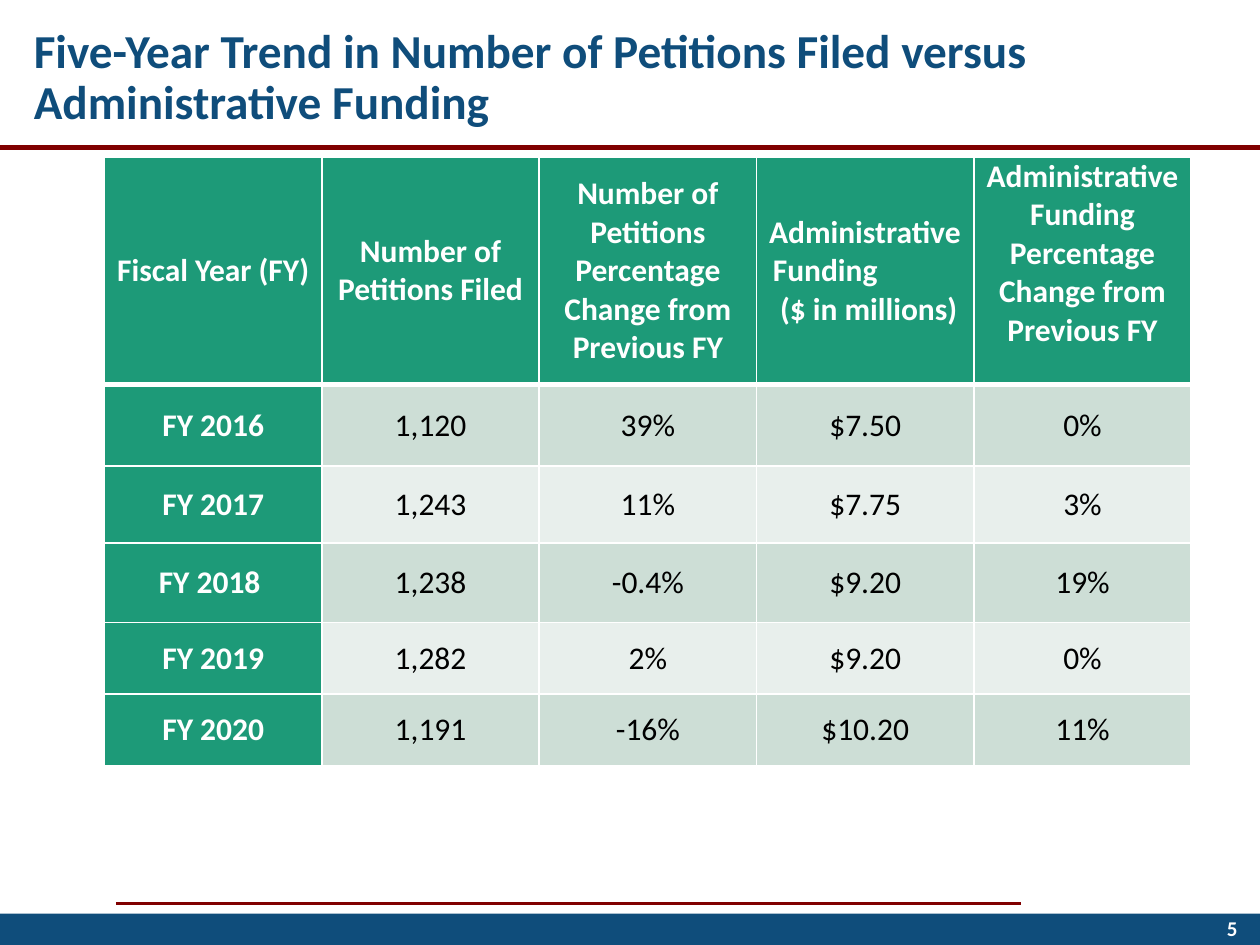
import dataclasses

import lxml.etree
import pptx
import pptx.dml.color
import pptx.enum.shapes
import pptx.enum.text
import pptx.oxml.ns
import pptx.util

Inches = pptx.util.Inches
Pt = pptx.util.Pt
ALIGN = pptx.enum.text.PP_ALIGN
ANCHOR = pptx.enum.text.MSO_ANCHOR
qn = pptx.oxml.ns.qn


@dataclasses.dataclass(frozen=True)
class Theme:
    font: str = "Calibri"
    navy: str = "0F4D7B"
    maroon: str = "800000"
    green: str = "1D9A78"
    bands: tuple = ("CDDED6", "E8EFEC")
    white: str = "FFFFFF"
    black: str = "000000"
    title_size: int = 27
    table_size: int = 18
    number_size: int = 12


THEME = Theme()

HEADERS = [
    "Fiscal Year (FY)",
    "Number of Petitions Filed",
    "Number of Petitions Percentage Change from Previous FY",
    "Administrative Funding\n ($ in millions)",
    "Administrative Funding Percentage Change from Previous FY",
]
YEARS = [
    ("FY 2016", "1,120", "39%", "$7.50", "0%"),
    ("FY 2017", "1,243", "11%", "$7.75", "3%"),
    ("FY 2018 ", "1,238", "-0.4%", "$9.20", "19%"),
    ("FY 2019", "1,282", "2%", "$9.20", "0%"),
    ("FY 2020", "1,191", "-16%", "$10.20", "11%"),
]
ROW_HEIGHTS = [1.8, 0.65, 0.61, 0.63, 0.57, 0.57]
COLUMN_WIDTH = 1.725


def rgb(value):
    return pptx.dml.color.RGBColor.from_string(value)


def style(paragraph, size, color, bold, align):
    paragraph.alignment = align
    paragraph.font.name = THEME.font
    paragraph.font.size = Pt(size)
    paragraph.font.bold = bold
    paragraph.font.color.rgb = rgb(color)


def add_text(slide, text, box, size, color, align=ALIGN.LEFT):
    frame = slide.shapes.add_textbox(*map(Inches, box)).text_frame
    frame.word_wrap = True
    frame.vertical_anchor = ANCHOR.MIDDLE
    frame.text = text
    style(frame.paragraphs[0], size, color, True, align)
    return frame


def add_rule(slide, left, right, y, weight):
    rule = slide.shapes.add_connector(
        pptx.enum.shapes.MSO_CONNECTOR.STRAIGHT,
        Inches(left), Inches(y), Inches(right), Inches(y))
    rule.line.color.rgb = rgb(THEME.maroon)
    rule.line.width = Pt(weight)
    lxml.etree.SubElement(rule._element.spPr, qn("a:effectLst"))


def add_footer_bar(slide):
    bar = slide.shapes.add_shape(
        pptx.enum.shapes.MSO_SHAPE.RECTANGLE,
        Inches(0), Inches(7.25), Inches(10), Inches(0.25))
    bar.shadow.inherit = False
    bar.fill.solid()
    bar.fill.fore_color.rgb = rgb(THEME.navy)
    bar.line.fill.background()


def set_borders(cell, bottom):
    properties = cell._tc.get_or_add_tcPr()
    for position, (side, weight) in enumerate(
            (("L", 1), ("R", 1), ("T", 1), ("B", bottom))):
        border = lxml.etree.Element(qn(f"a:ln{side}"), w=str(Pt(weight)))
        fill = lxml.etree.SubElement(border, qn("a:solidFill"))
        lxml.etree.SubElement(fill, qn("a:srgbClr"), val=THEME.white)
        properties.insert(position, border)


def fill_cell(cell, text, fill, color, bold, bottom=1):
    cell.fill.solid()
    cell.fill.fore_color.rgb = rgb(fill)
    cell.margin_left = cell.margin_right = Inches(0.07)
    cell.margin_top = cell.margin_bottom = 0
    cell.vertical_anchor = ANCHOR.MIDDLE
    cell.text = text
    for paragraph in cell.text_frame.paragraphs:
        style(paragraph, THEME.table_size, color, bold, ALIGN.CENTER)
    set_borders(cell, bottom)


def add_funding_table(slide):
    table = slide.shapes.add_table(
        len(ROW_HEIGHTS), len(HEADERS), Inches(0.83), Inches(1.25),
        Inches(COLUMN_WIDTH * len(HEADERS)), Inches(sum(ROW_HEIGHTS))).table
    for column in table.columns:
        column.width = Inches(COLUMN_WIDTH)
    for row, height in zip(table.rows, ROW_HEIGHTS):
        row.height = Inches(height)

    # Header row
    for column, header in enumerate(HEADERS):
        fill_cell(table.cell(0, column), header, THEME.green, THEME.white,
                  True, bottom=3)
    table.cell(0, 4).vertical_anchor = ANCHOR.TOP

    # "Funding" hangs just right of the start of "Administrative"
    funding_heading = table.cell(0, 3).text_frame.paragraphs[0]
    funding_heading.alignment = ALIGN.LEFT
    funding_heading._p.get_or_add_pPr().set("marL", str(Inches(0.06)))
    funding_heading._p.get_or_add_pPr().set("indent", str(Inches(-0.03)))

    # One banded row per fiscal year
    for row, values in enumerate(YEARS, start=1):
        band = THEME.bands[(row - 1) % 2]
        for column, value in enumerate(values):
            is_year = column == 0
            fill_cell(table.cell(row, column), value,
                      THEME.green if is_year else band,
                      THEME.white if is_year else THEME.black, is_year)


def main():
    deck = pptx.Presentation()
    deck.slide_width, deck.slide_height = Inches(10), Inches(7.5)
    slide = deck.slides.add_slide(deck.slide_layouts[6])

    # Rules and footer bar
    add_rule(slide, 0.92, 8.1, 7.17, 1.5)
    add_footer_bar(slide)
    add_rule(slide, 0, 10, 1.17, 3)

    # Title, kept above the rule by the bottom inset
    title = add_text(
        slide,
        "Five-Year Trend in Number of Petitions Filed versus "
        "Administrative Funding",
        (0.17, 0, 9.75, 1.7), THEME.title_size, THEME.navy)
    title.margin_bottom = Inches(0.5)
    title.paragraphs[0].line_spacing = 0.9

    add_funding_table(slide)

    # Slide number
    add_text(slide, "5", (7.67, 7.17, 2.25, 0.4), THEME.number_size,
             THEME.white, ALIGN.RIGHT)
    deck.save("out.pptx")


if __name__ == "__main__":
    main()
